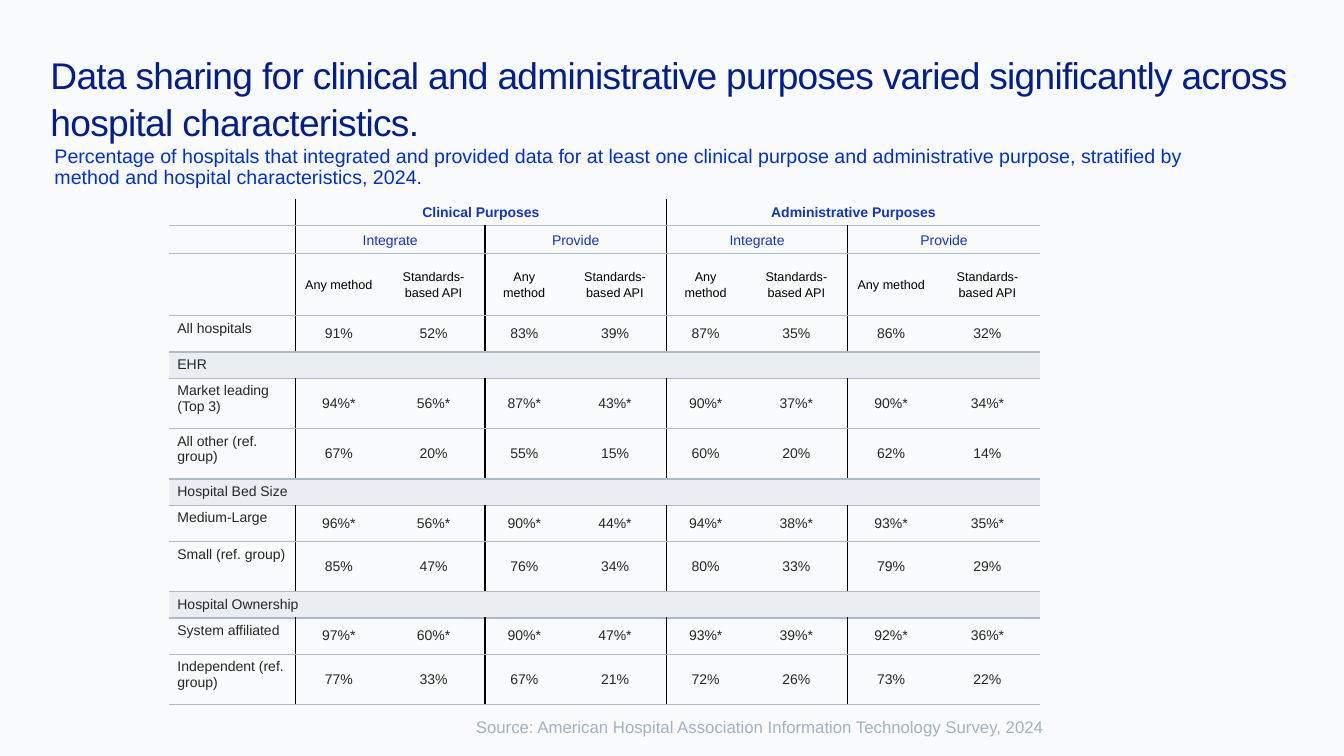
from lxml.etree import SubElement
from pptx import Presentation
from pptx.dml.color import RGBColor
from pptx.enum.text import MSO_ANCHOR, MSO_AUTO_SIZE, PP_ALIGN
from pptx.oxml.ns import qn
from pptx.util import Inches, Pt

HUES = {
    "page": "FAFBFC", "band": "EAEEF2", "title": "001D91", "lead": "0030CE",
    "head": "1334CB", "body": "262626", "black": "000000", "rule": "ABBBCC",
    "source": "A0B3C4",
}
COLS = [1.25, 0.86, 1.02, 0.78, 1.02, 0.78, 1.02, 0.86, 1.05]
HEADS = [
    ["", "Clinical Purposes", "", "", "", "Administrative Purposes", "", "", ""],
    ["", "Integrate", "", "Provide", "", "Integrate", "", "Provide", ""],
    [""] + ["Any method", "Standards-based API"] * 4,
]
# Each entry: row height, label, values; a row without values is a band
BODY = [
    (0.36, "All hospitals", "91% 52% 83% 39% 87% 35% 86% 32%"),
    (0.26, "EHR", ""),
    (0.5, "Market leading (Top 3)", "94%* 56%* 87%* 43%* 90%* 37%* 90%* 34%*"),
    (0.5, "All other (ref. group)", "67% 20% 55% 15% 60% 20% 62% 14%"),
    (0.26, "Hospital Bed Size", ""),
    (0.36, "Medium-Large", "96%* 56%* 90%* 44%* 94%* 38%* 93%* 35%*"),
    (0.5, "Small (ref. group)", "85% 47% 76% 34% 80% 33% 79% 29%"),
    (0.26, "Hospital Ownership", ""),
    (0.36, "System affiliated", "97%* 60%* 90%* 47%* 93%* 39%* 92%* 36%*"),
    (0.5, "Independent (ref. group)", "77% 33% 67% 21% 72% 26% 73% 22%"),
]
HIGHS = [0.26, 0.27, 0.62] + [high for high, _, _ in BODY]


def hue(name):
    return RGBColor.from_string(HUES[name])


def apply(item, **form):
    for key, value in form.items():
        setattr(item, key, value)


def write(para, text, size, color, bold=False):
    run = para.add_run()
    run.text = text
    apply(run.font, name="Arial", size=Pt(size), bold=bold)
    run.font.color.rgb = hue(color)
    return run


def add_title(slide, left, top, width, height):
    shape = slide.shapes.title
    apply(shape, left=Inches(left), top=Inches(top),
          width=Inches(width), height=Inches(height))
    frame = shape.text_frame
    apply(frame, margin_left=0, margin_right=0, margin_top=0,
          margin_bottom=Inches(0.05), word_wrap=True,
          auto_size=MSO_AUTO_SIZE.NONE, vertical_anchor=MSO_ANCHOR.TOP)
    para = frame.paragraphs[0]
    apply(para, alignment=PP_ALIGN.LEFT, line_spacing=1.05)
    run = write(para, "Data sharing for clinical and administrative purposes "
                "varied significantly across hospital characteristics.",
                26.5, "title")
    run._r.get_or_add_rPr().set("spc", "-50")


def add_note(slide, left, top, width, height, text, size, color):
    box = slide.shapes.add_textbox(Inches(left), Inches(top),
                                   Inches(width), Inches(height))
    frame = box.text_frame
    inset = Inches(0.05)
    apply(frame, margin_left=inset, margin_right=inset, margin_top=inset,
          margin_bottom=inset, word_wrap=True)
    para = frame.paragraphs[0]
    para.line_spacing = 0.9
    write(para, text, size, color)


def edge(cell, side, color):
    """Draw one cell border, or clear it when no colour is given."""
    line = SubElement(cell._tc.get_or_add_tcPr(), qn(f"a:ln{side}"), w="12700")
    if color:
        fill = SubElement(line, qn("a:solidFill"))
        SubElement(fill, qn("a:srgbClr"), val=HUES[color])
    else:
        SubElement(line, qn("a:noFill"))


def divider(row, col):
    """Tell whether a black line stands left of this column."""
    if row >= 3 and not BODY[row - 3][2]:
        return None
    return "black" if col in ((1, 5) if row == 0 else (1, 3, 5, 7)) else None


def fill_cell(cell, row, col, text):
    band = row >= 3 and not BODY[row - 3][2]
    apply(cell, margin_left=Inches(0.08), margin_right=Inches(0.08),
          margin_top=Inches(0.05), margin_bottom=Inches(0.05),
          vertical_anchor=MSO_ANCHOR.MIDDLE if row > 1 and col
          else MSO_ANCHOR.TOP)
    edge(cell, "L", divider(row, col))
    edge(cell, "R", divider(row, col + 1))
    edge(cell, "T", "rule" if row else None)
    edge(cell, "B", "rule")
    cell.fill.solid()
    cell.fill.fore_color.rgb = hue("band" if band else "page")

    para = cell.text_frame.paragraphs[0]
    if col:
        para.alignment = PP_ALIGN.CENTER
    if text:
        if row < 3:
            para.line_spacing = 1.1
        color = "head" if row < 2 else "black" if row == 2 else "body"
        write(para, text, 9 if row == 2 else 10, color, row == 0)
    else:
        SubElement(para._p, qn("a:endParaRPr"), sz="900")


def add_grid(slide, left, top):
    rows = HEADS + [[label] + (values.split() or [""] * 8)
                    for _, label, values in BODY]
    table = slide.shapes.add_table(
        len(rows), len(COLS), Inches(left), Inches(top),
        Inches(sum(COLS)), Inches(sum(HIGHS))).table
    apply(table, first_row=False, horz_banding=False)
    for col, width in zip(table.columns, COLS):
        col.width = Inches(width)
    for row, high in zip(table.rows, HIGHS):
        row.height = Inches(high)
    for r, texts in enumerate(rows):
        for c, text in enumerate(texts):
            fill_cell(table.cell(r, c), r, c, text)

    # Merged headings and bands: row, first column, last column
    spans = [(0, 1, 4), (0, 5, 8)] + [(1, c, c + 1) for c in (1, 3, 5, 7)]
    spans += [(4, 0, 7), (7, 0, 7), (10, 0, 8)]
    for row, start, end in spans:
        table.cell(row, start).merge(table.cell(row, end))
        # The merged cell takes the right border of its last column
        line = table.cell(row, start)._tc.tcPr.find(qn("a:lnR"))
        if divider(row, end + 1):
            line.remove(line[0])
            fill = SubElement(line, qn("a:solidFill"))
            SubElement(fill, qn("a:srgbClr"), val=HUES["black"])


def main():
    deck = Presentation()
    apply(deck, slide_width=Inches(13.33), slide_height=Inches(7.5))
    slide = deck.slides.add_slide(deck.slide_layouts.get_by_name("Title Only"))
    slide.background.fill.solid()
    slide.background.fill.fore_color.rgb = hue("page")
    add_grid(slide, 1.68, 1.97)
    add_title(slide, 0.5, 0.5, 12.34, 0.97)
    add_note(slide, 0.49, 1.4, 11.37, 0.49,
             "Percentage of hospitals that integrated and provided data for at "
             "least one clinical purpose and administrative purpose, stratified "
             "by method and hospital characteristics, 2024.", 14, "lead")
    add_note(slide, 4.67, 7.08, 5.96, 0.33,
             "Source: American Hospital Association Information Technology "
             "Survey, 2024", 12, "source")
    deck.save("out.pptx")


if __name__ == "__main__":
    main()
